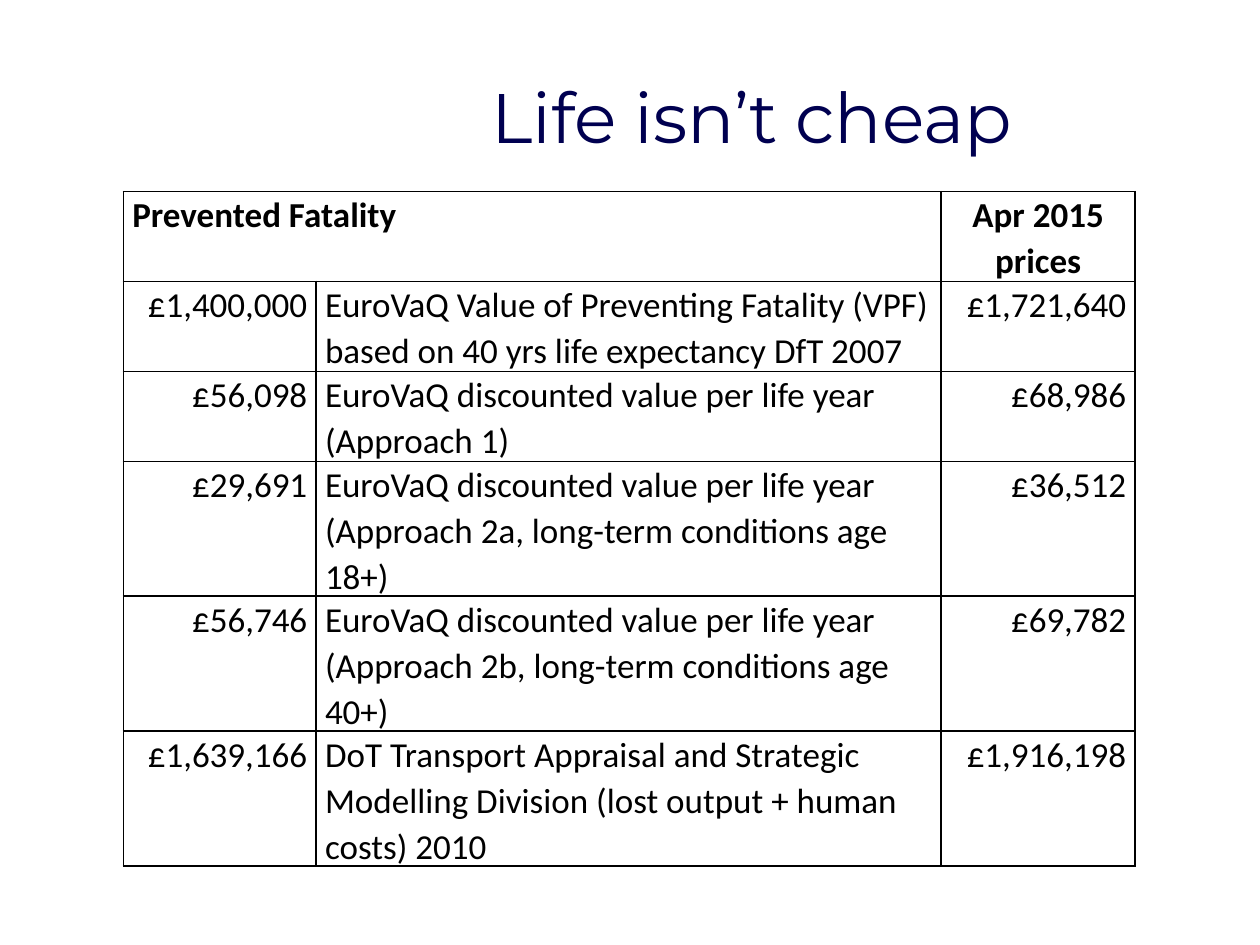
from dataclasses import dataclass

from lxml.etree import SubElement
from pptx import Presentation
from pptx.dml.color import RGBColor
from pptx.enum.text import MSO_ANCHOR as Anchor, PP_ALIGN as Align
from pptx.oxml.ns import qn
from pptx.util import Inches, Pt


@dataclass(frozen=True)
class Theme:
    title_font: str = "Montserrat"
    body_font: str = "Calibri"
    title_size: int = 40
    body_size: int = 20
    title_color: str = "000050"
    ink: str = "000000"
    paper: str = "FFFFFF"
    border_width: int = 1


theme = Theme()


def add_run(paragraph, text, name, size, color, bold=False):
    run = paragraph.add_run()
    run.text = text
    run.font.name = name
    run.font.size = Pt(size)
    run.font.bold = bold
    run.font.color.rgb = RGBColor.from_string(color)


def add_borders(cell):
    properties = cell._tc.get_or_add_tcPr()
    for position, side in enumerate(("lnL", "lnR", "lnT", "lnB")):
        line = properties.makeelement(qn(f"a:{side}"), {"w": str(Pt(theme.border_width))})
        fill = SubElement(line, qn("a:solidFill"))
        SubElement(fill, qn("a:srgbClr"), val=theme.ink)
        properties.insert(position, line)


presentation = Presentation()
presentation.slide_width, presentation.slide_height = Inches(10), Inches(7.5)
slide = presentation.slides.add_slide(presentation.slide_layouts[6])
slide.background.fill.solid()
slide.background.fill.fore_color.rgb = RGBColor.from_string(theme.paper)

title = slide.shapes.add_textbox(Inches(1.93), Inches(0.29), Inches(8.07), Inches(1.25))
title.text_frame.word_wrap = True
title.text_frame.vertical_anchor = Anchor.MIDDLE
heading = title.text_frame.paragraphs[0]
heading.alignment = Align.CENTER
add_run(heading, "Life isn’t cheap", theme.title_font, theme.title_size, theme.title_color)

rows = [
    ("Prevented Fatality", "", "Apr 2015 prices"),
    ("£1,400,000", "EuroVaQ Value of Preventing Fatality (VPF) based on 40 yrs life expectancy DfT 2007", "£1,721,640"),
    ("£56,098", "EuroVaQ discounted value per life year (Approach 1)", "£68,986"),
    ("£29,691", "EuroVaQ discounted value per life year (Approach 2a, long-term conditions age 18+)", "£36,512"),
    ("£56,746", "EuroVaQ discounted value per life year (Approach 2b, long-term conditions age 40+)", "£69,782"),
    ("£1,639,166", "DoT Transport Appraisal and Strategic Modelling Division (lost output + human costs) 2010", "£1,916,198"),
]
column_widths = [1.53, 4.96, 1.54]
row_heights = [0.7] * 3 + [1.06] * 3
header_alignment = (Align.LEFT, Align.LEFT, Align.CENTER)
body_alignment = (Align.RIGHT, Align.LEFT, Align.RIGHT)

table = slide.shapes.add_table(
    len(rows), len(column_widths), Inches(0.98), Inches(1.52),
    Inches(sum(column_widths)), Inches(sum(row_heights)),
).table
table.first_row = table.horz_banding = False
for column, width in zip(table.columns, column_widths):
    column.width = Inches(width)
for row, height in zip(table.rows, row_heights):
    row.height = Inches(height)
table.cell(0, 0).merge(table.cell(0, 1))

for row_index, texts in enumerate(rows):
    is_header = row_index == 0
    alignments = header_alignment if is_header else body_alignment
    for column_index, (text, alignment) in enumerate(zip(texts, alignments)):
        cell = table.cell(row_index, column_index)
        cell.margin_left = cell.margin_right = Inches(0.07)
        cell.margin_top = cell.margin_bottom = 0
        cell.fill.background()
        add_borders(cell)
        if cell.is_spanned:
            continue
        paragraph = cell.text_frame.paragraphs[0]
        paragraph.alignment = alignment
        paragraph.line_spacing = 1.07
        add_run(paragraph, text, theme.body_font, theme.body_size, theme.ink, is_header)

presentation.save("out.pptx")
